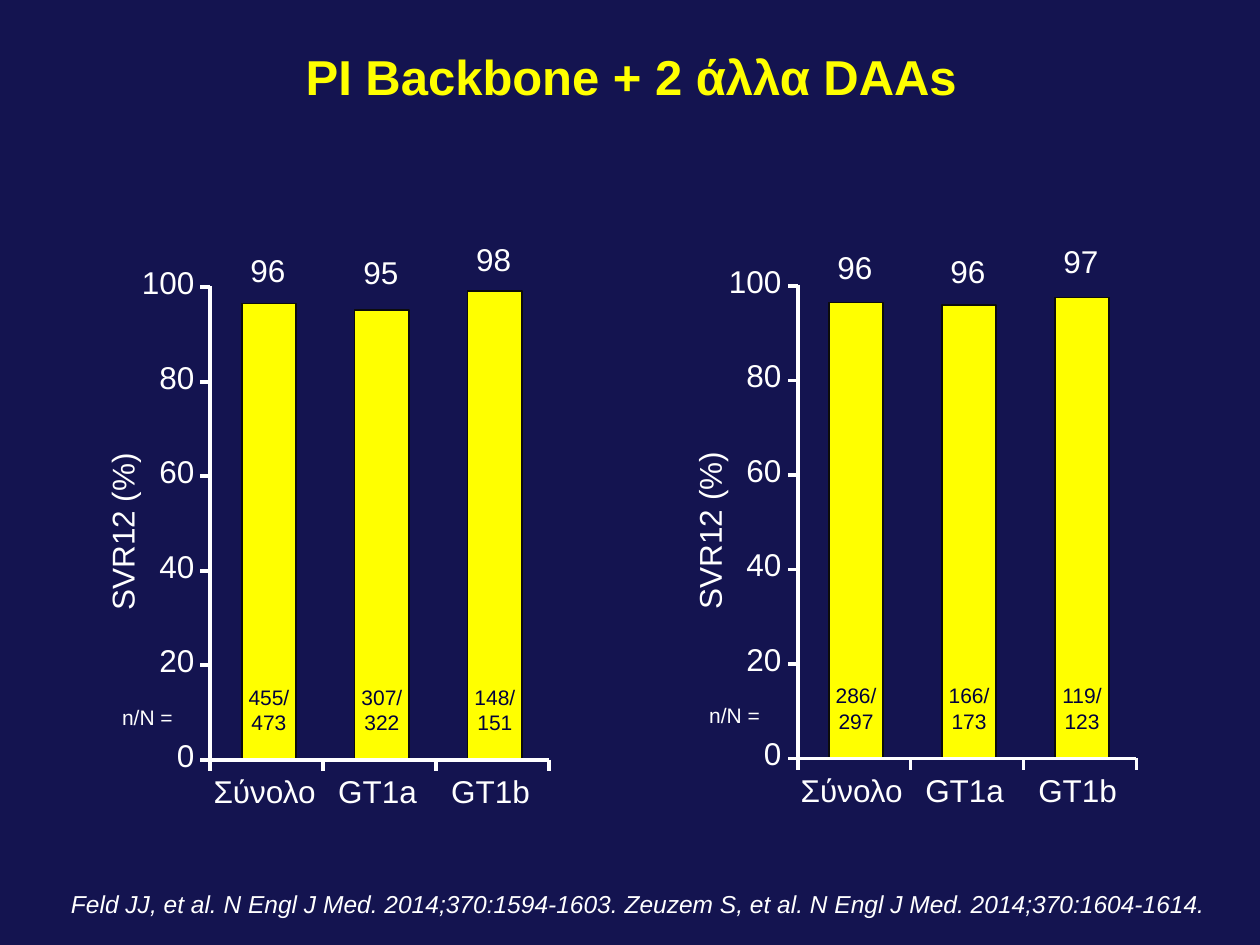
from pptx import Presentation
from pptx.dml.color import RGBColor
from pptx.enum.shapes import MSO_CONNECTOR, MSO_SHAPE
from pptx.enum.text import MSO_ANCHOR, PP_ALIGN
from pptx.oxml.ns import qn
from pptx.util import Inches, Pt
from lxml.etree import SubElement

COLORS = {"back": "141450", "bar": "FFFF00", "edge": "0C0C0C",
          "text": "FFFFFF", "dark": "00003C"}
PITCH = 2.69 / 3
STEP = 0.75
GROUPS = ["Σύνολο", "GT1a", "GT1b"]
# Origin of the axes, then per bar: percent, count, bar height, label rise
PANELS = [
    (1.67, 6.03, [(96, "455/\n473", 3.61, 4.09),
                  (95, "307/\n322", 3.56, 4.07),
                  (98, "148/\n151", 3.71, 4.17)]),
    (6.33, 6.02, [(96, "286/\n297", 3.61, 4.10),
                  (96, "166/\n173", 3.59, 4.07),
                  (97, "119/\n123", 3.65, 4.15)]),
]


def color(name):
    return RGBColor.from_string(COLORS[name])


class Painter:
    """Holds the text style and the slide being drawn."""

    def __init__(self, slide):
        self.slide = slide
        self.style = {"name": "Arial", "size": Pt(18)}

    def text(self, words, x, y, w, h, tone="text", align=PP_ALIGN.CENTER,
             wrap=True, anchor=MSO_ANCHOR.TOP, **font):
        box = self.slide.shapes.add_textbox(*map(Inches, (x, y, w, h)))
        frame = box.text_frame
        frame.word_wrap = wrap
        frame.vertical_anchor = anchor
        par = frame.paragraphs[0]
        par.text = words
        par.alignment = align
        for run in par.runs:
            for key, value in {**self.style, **font}.items():
                setattr(run.font, key, value)
            run.font.color.rgb = color(tone)
        return box

    def bar(self, x, y, w, h):
        shape = self.slide.shapes.add_shape(
            MSO_SHAPE.RECTANGLE, *map(Inches, (x, y, w, h)))
        shape.shadow.inherit = False
        shape.fill.solid()
        shape.fill.fore_color.rgb = color("bar")
        shape.line.color.rgb = color("edge")
        shape.line.width = Pt(0.75)

    def line(self, *ends):
        link = self.slide.shapes.add_connector(
            MSO_CONNECTOR.STRAIGHT, *map(Inches, ends))
        link.line.color.rgb = color("text")
        link.line.width = Pt(2.25)
        SubElement(link._element.spPr, qn("a:effectLst"))

    def panel(self, left, base, bars):
        """Draw one bar chart whose axes meet at (left, base)."""
        small = {"size": Pt(12), "wrap": False}
        for i, (rate, count, height, rise) in enumerate(bars):
            x = left + i * PITCH
            self.bar(x + 0.25, base - 0.01 - height, 0.43, height)
            self.text(count, x + 0.2, base - 0.65, 0.53, 0.62, "dark", **small)
            self.text(str(rate), x + 0.08, base - rise, 0.75, 0.5)
            self.text(GROUPS[i], x - 0.17, base + 0.05, 1.2, 0.5)
        self.text("n/N =", left - 0.8, base - 0.49, 0.61, 0.37,
                  align=PP_ALIGN.LEFT, **small)

        self.line(left, base, left, base - 5 * STEP - 0.01)
        self.line(left - 0.01, base, left + 3 * PITCH, base)
        for i in range(6):
            y = base - i * STEP
            self.line(left, y, left - 0.08, y)
            self.text(str(20 * i), left - 0.78, y - 0.24, 0.75, 0.5,
                      align=PP_ALIGN.RIGHT)
        for i in range(4):
            x = left + i * PITCH
            self.line(x, base, x, base + 0.09)
        name = self.text("SVR12 (%)", left - 2.63, base - 2.01, 3.86, 0.4)
        name.rotation = 270


def main():
    deck = Presentation()
    deck.slide_width, deck.slide_height = Inches(10), Inches(7.5)
    slide = deck.slides.add_slide(deck.slide_layouts[6])
    slide.background.fill.solid()
    slide.background.fill.fore_color.rgb = color("back")

    paint = Painter(slide)
    title = paint.text("PI Backbone + 2 άλλα DAAs", 0.26, 0.25, 9.5, 0.78,
                       "bar", anchor=MSO_ANCHOR.MIDDLE, size=Pt(28), bold=True)
    frame = title.text_frame
    for side in ("left", "top", "right", "bottom"):
        setattr(frame, f"margin_{side}", 0)
    frame.paragraphs[0].line_spacing = 0.85

    for panel in PANELS:
        paint.panel(*panel)

    paint.text("Feld JJ, et al. N Engl J Med. 2014;370:1594-1603. "
               "Zeuzem S, et al. N Engl J Med. 2014;370:1604-1614.",
               0.31, 7, 9.36, 0.34, align=PP_ALIGN.RIGHT,
               anchor=MSO_ANCHOR.BOTTOM, size=Pt(14), italic=True)
    deck.save("out.pptx")


if __name__ == "__main__":
    main()
